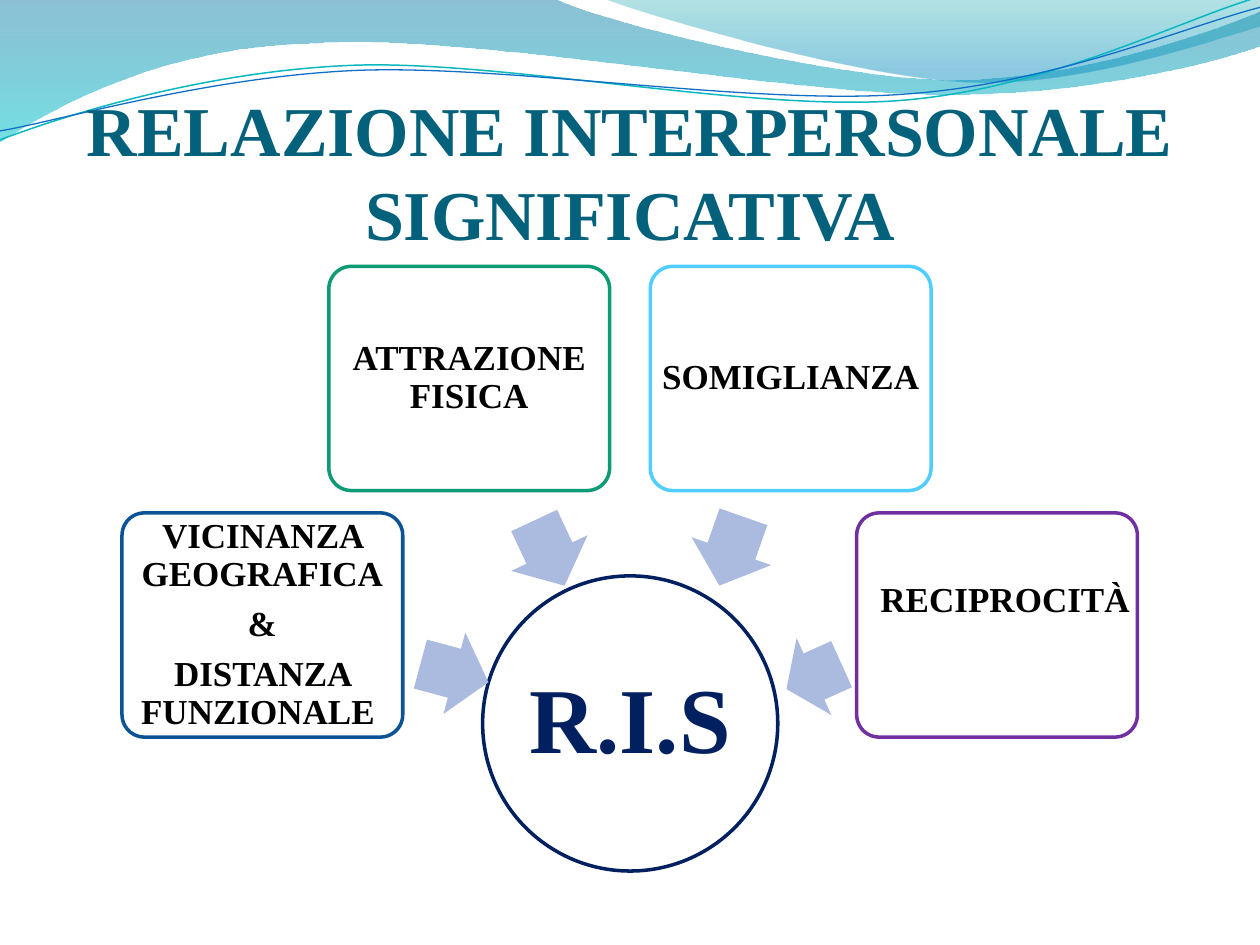
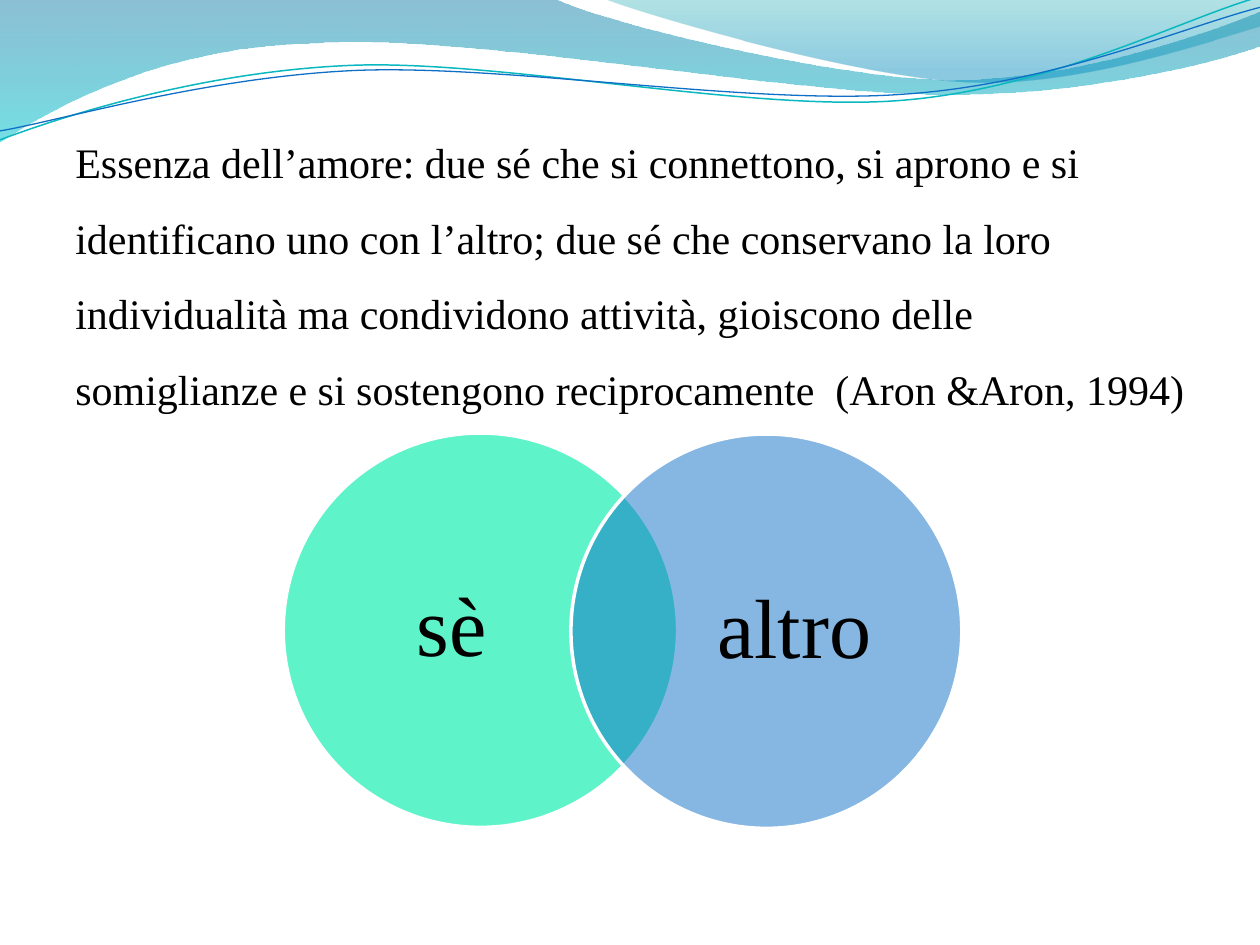
import dataclasses

import pptx
import pptx.dml.color
import pptx.enum.shapes
import pptx.enum.text
import pptx.oxml.ns
import pptx.util
from lxml import etree

Cm = pptx.util.Cm
Pt = pptx.util.Pt
qn = pptx.oxml.ns.qn
Shape = pptx.enum.shapes.MSO_SHAPE
Align = pptx.enum.text.PP_ALIGN
Anchor = pptx.enum.text.MSO_ANCHOR


@dataclasses.dataclass(frozen=True)
class Theme:
    font: str = "Times New Roman"
    title: str = "04617B"
    ink: str = "000000"
    core: str = "002060"
    arrow: str = "ABBBDF"
    proximity: str = "0B5394"
    attraction: str = "0C9B74"
    similarity: str = "4FCEFF"
    reciprocity: str = "7030A0"
    self_fill: str = "5FF3CA"
    other_fill: str = "0F6FC6"
    white: str = "FFFFFF"
    back_wave: tuple = ((0, "0074A1", 45), (1, "00C6CF", 55))
    front_wave: tuple = ((0, "00A1A9", 30), (0.8, "008BBF", 45))
    teal_thread: str = "0AB8BF"
    blue_thread: str = "0F6FC6"
    title_size: int = 40
    core_size: int = 53
    card_size: int = 20
    body_size: int = 24
    venn_size: int = 48
    outline: float = 2


THEME = Theme()
SLIDE_W, SLIDE_H = 25.4, 19.05
TEXT_INSET = (0.25, 0.13, 0.25, 0.13)

BACK_WAVE = [
    [(0, 0)], [(11.18, -0.03)],
    [(12.09, 0.43), (16.87, 1.6), (19.25, 1.6)],
    [(21.67, 1.6), (24.33, 0.66), (25.4, 0.23)],
    [(25.43, 0.91)],
    [(24.97, 1.12), (22.1, 1.93), (18.95, 1.9)],
    [(15.8, 1.9), (9.7, 0.71), (6.53, 0.86)],
    [(3.28, 0.91), (1.17, 2.11), (-0.03, 2.87)],
]
FRONT_WAVE = [
    [(12.17, -0.03)],
    [(12.93, 0.28), (17.32, 1.57), (19.53, 1.65)],
    [(21.74, 1.75), (24.41, 0.81), (25.4, 0.53)],
    [(25.4, 0)],
]
TEAL_THREAD = [
    [(0, 2.82)],
    [(1.22, 2.36), (4.01, 1.45), (7.04, 1.32)],
    [(10.03, 1.19), (15.06, 2.26), (18.11, 2.03)],
    [(21.16, 1.8), (23.83, 0.38), (25.35, -0.05)],
]
BLUE_THREAD = [
    [(0, 2.64)],
    [(1.19, 2.44), (4.17, 1.55), (7.19, 1.42)],
    [(10.24, 1.3), (15.16, 2.13), (18.21, 1.9)],
    [(21.23, 1.7), (23.9, 0.53), (25.4, 0.15)],
]


def rgb(value):
    return pptx.dml.color.RGBColor.from_string(value)


def apply(target, values):
    for name, value in values.items():
        setattr(target, name, value)


def set_opacity(fill_element, percents):
    for color, percent in zip(fill_element.iter(qn("a:srgbClr")), percents):
        etree.SubElement(color, qn("a:alpha")).set("val", str(percent * 1000))


def bend(outline, segments):
    strokes = iter(list(outline.element.iter(qn("a:lnTo"))))
    for segment in segments[1:]:
        stroke, *others = [next(strokes) for _ in segment]
        if others:
            curve = etree.Element(qn("a:cubicBezTo"))
            stroke.addprevious(curve)
            for part in (stroke, *others):
                curve.append(part[0])
                part.getparent().remove(part)


def add_outline(slide, segments, closed):
    start, *rest = [(Cm(x), Cm(y)) for segment in segments for x, y in segment]
    builder = slide.shapes.build_freeform(*start)
    builder.add_line_segments(rest, close=closed)
    outline = builder.convert_to_shape()
    outline.shadow.inherit = False
    bend(outline, segments)
    return outline


def set_line(shape, color, width):
    shape.line.color.rgb = rgb(color)
    shape.line.width = Pt(width)


def add_wave(slide, segments, stops):
    wave = add_outline(slide, segments, True)
    wave.line.fill.background()
    wave.fill.gradient()
    wave.fill.gradient_angle = 270
    for stop, (position, color, _) in zip(wave.fill.gradient_stops, stops):
        stop.position = position
        stop.color.rgb = rgb(color)
    set_opacity(wave.element.spPr, [opacity for _, _, opacity in stops])


def add_thread(slide, segments, color, width):
    thread = add_outline(slide, segments, False)
    thread.fill.background()
    set_line(thread, color, width)


def decorate_layout(slide):
    add_wave(slide, BACK_WAVE, THEME.back_wave)
    add_wave(slide, FRONT_WAVE, THEME.front_wave)
    add_thread(slide, TEAL_THREAD, THEME.teal_thread, 0.85)
    add_thread(slide, BLUE_THREAD, THEME.blue_thread, 0.75)
    layout_shapes = slide.slide_layout.shapes.element
    for ornament in list(slide.shapes):
        layout_shapes.append(ornament.element)


def write(shape, paragraphs, size, color=THEME.ink, bold=False, inset=(0, 0, 0, 0),
          anchor=Anchor.MIDDLE, **paragraph_format):
    frame = shape.text_frame
    left, top, right, bottom = (Cm(value) for value in inset)
    apply(frame, {"word_wrap": True, "vertical_anchor": anchor,
                  "margin_left": left, "margin_top": top,
                  "margin_right": right, "margin_bottom": bottom})
    for index, text in enumerate(paragraphs):
        paragraph = frame.add_paragraph() if index else frame.paragraphs[0]
        apply(paragraph, {"alignment": Align.CENTER, **paragraph_format})
        run = paragraph.add_run()
        run.text = text
        apply(run.font, {"name": THEME.font, "size": Pt(size), "bold": bold})
        run.font.color.rgb = rgb(color)


def diagram_spacing(size):
    return {"line_spacing": 0.9, "space_after": Pt(round(size * 0.35))}


def add_text(slide, box, paragraphs, size, **style):
    write(slide.shapes.add_textbox(*map(Cm, box)), paragraphs, size, **style)


def add_figure(slide, preset, box, fill=None, line=None, opacity=None):
    figure = slide.shapes.add_shape(preset, *map(Cm, box))
    figure.shadow.inherit = False
    if fill:
        figure.fill.solid()
        figure.fill.fore_color.rgb = rgb(fill)
    else:
        figure.fill.background()
    if opacity:
        set_opacity(figure.element.spPr, [opacity])
    if line:
        set_line(figure, line, THEME.outline)
    else:
        figure.line.fill.background()
    return figure


def add_card(slide, left, top, color, paragraphs):
    card = add_figure(slide, Shape.ROUNDED_RECTANGLE, (left, top, 5.66, 4.52), line=color)
    card.adjustments[0] = 0.1
    if paragraphs:
        write(card, paragraphs, THEME.card_size, bold=True,
              **diagram_spacing(THEME.card_size))


def add_arrow(slide, left, top, width, rotation):
    arrow = add_figure(slide, Shape.LEFT_ARROW, (left, top, width, 1.7), fill=THEME.arrow)
    arrow.adjustments[0] = 0.6
    arrow.adjustments[1] = 0.5
    arrow.rotation = rotation


def add_venn_circle(slide, circle_box, label_box, label, fill, opacity=None):
    add_figure(slide, Shape.OVAL, circle_box, fill, THEME.white, opacity)
    add_text(slide, label_box, [label], THEME.venn_size,
             **diagram_spacing(THEME.venn_size))


def build_relationship(slide):
    add_text(slide, (1.27, 1.96, 22.86, 3.18), ["RELAZIONE INTERPERSONALE SIGNIFICATIVA"],
             THEME.title_size, color=THEME.title, bold=True,
             inset=(0, 0.13, 0, 0), anchor=Anchor.BOTTOM)

    core = add_figure(slide, Shape.OVAL, (9.73, 11.61, 5.95, 5.95), line=THEME.core)
    write(core, ["R.I.S"], THEME.core_size, color=THEME.core, bold=True,
          **diagram_spacing(THEME.core_size))

    upper, lower = 5.37, 10.34
    factors = [
        (2.46, lower, THEME.proximity,
         ["VICINANZA GEOGRAFICA", "&", "DISTANZA FUNZIONALE "], (8.45, 12.72, 1.42, 195)),
        (6.63, upper, THEME.attraction, ["ATTRAZIONE FISICA"], (10.35, 10.3, 1.45, 245)),
        (13.11, upper, THEME.similarity, ["SOMIGLIANZA"], (14.01, 10.26, 1.47, 289.3)),
        (17.27, lower, THEME.reciprocity, [], (15.8, 12.79, 1.22, 335.7)),
    ]
    for left, top, color, paragraphs, arrow in factors:
        add_arrow(slide, *arrow)
        add_card(slide, left, top, color, paragraphs)
    add_text(slide, (17.5, 11.52, 6, 1.12), ["RECIPROCITÀ"], THEME.card_size, bold=True,
             inset=TEXT_INSET, anchor=Anchor.TOP, alignment=Align.LEFT)


def build_essence(slide):
    essence = ("Essenza dell’amore: due sé che si connettono, si aprono e si identificano "
               "uno con l’altro; due sé che conservano la loro individualità ma "
               "condividono attività, gioiscono delle somiglianze e si sostengono "
               "reciprocamente  (Aron &Aron, 1994)")
    add_text(slide, (1.27, 2.12, 22.86, 6.2), [essence], THEME.body_size,
             inset=TEXT_INSET, anchor=Anchor.TOP,
             alignment=Align.LEFT, line_spacing=1.5)
    add_venn_circle(slide, (5.71, 8.73, 7.95, 7.95), (6.81, 9.66, 4.6, 6.07),
                    "sè", THEME.self_fill)
    add_venn_circle(slide, (11.51, 8.75, 7.88, 7.95), (13.74, 9.7, 4.55, 6.07),
                    "altro", THEME.other_fill, opacity=50)


def main():
    deck = pptx.Presentation()
    apply(deck, {"slide_width": Cm(SLIDE_W), "slide_height": Cm(SLIDE_H)})
    blank = deck.slide_layouts[6]
    relationship, essence = (deck.slides.add_slide(blank) for _ in range(2))
    decorate_layout(relationship)
    build_relationship(relationship)
    build_essence(essence)
    deck.save("out.pptx")


if __name__ == "__main__":
    main()
